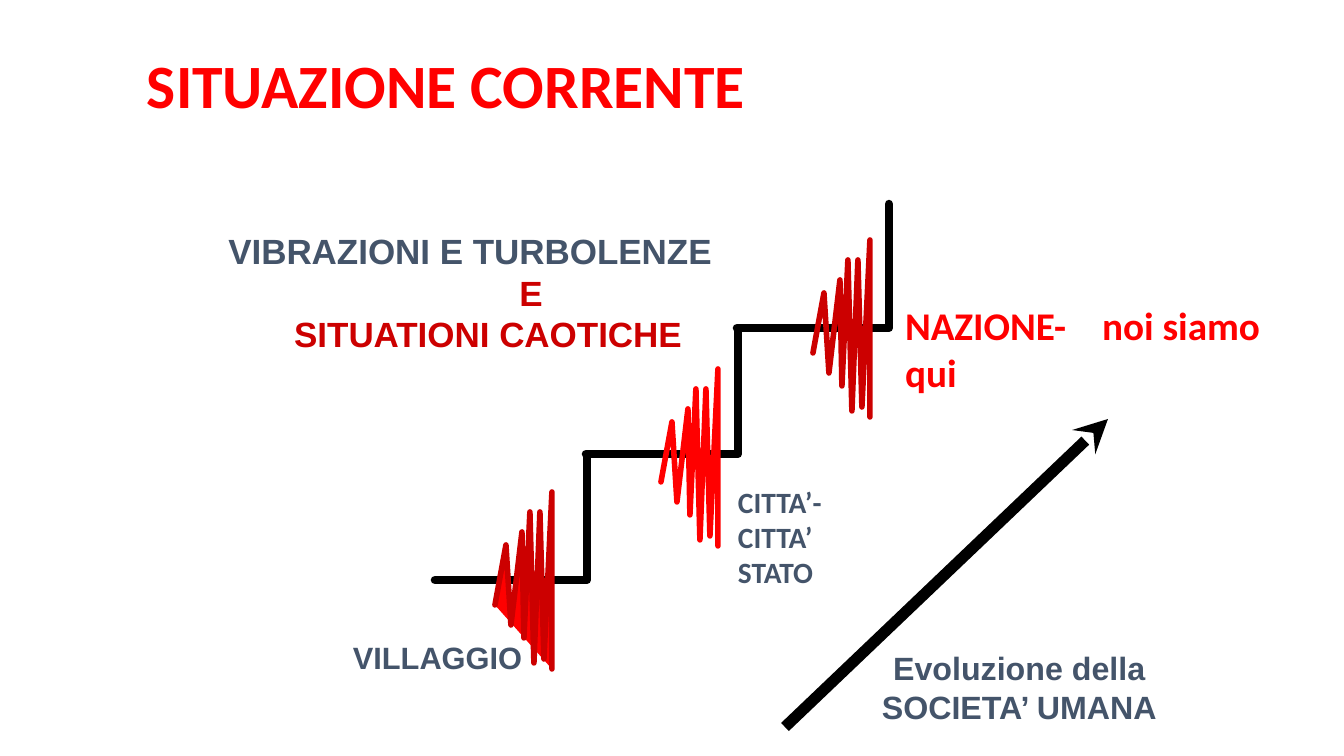
import pptx
import pptx.util
import pptx.dml.color
import pptx.enum.shapes
import pptx.enum.text
import pptx.oxml.ns
from lxml import etree

PX = 914400 / 100.8  # EMU per px
ALIGN = pptx.enum.text.PP_ALIGN
ANCHOR = pptx.enum.text.MSO_ANCHOR
COLORS = {"red": "FF0000", "dark_red": "CC0000", "slate": "44546A", "black": "000000"}

# One step and one turbulence wave, in px from their starting points
STEP = [(0, 0), (152, 0), (152, -124)]
WAVE = [(0, 0), (11, -60), (16, 20), (27, -73), (29, 33), (35, -93),
        (39, 58), (45, -93), (49, 54), (57, -113), (57, 64)]


def px(n):
    return pptx.util.Emu(round(n * PX))


def rgb(name):
    return pptx.dml.color.RGBColor.from_string(COLORS[name])


def sub(parent, tag, **attrs):
    return etree.SubElement(parent, pptx.oxml.ns.qn(tag), attrs)


def add_text(s, box, lines, size, font, color, inset=(10, 5), align=ALIGN.LEFT,
             pitch=None, anchor=ANCHOR.TOP):
    """Place bold lines in the box; return their paragraphs."""
    tf = s.shapes.add_textbox(*map(px, box)).text_frame
    tf.word_wrap = True
    tf.vertical_anchor = anchor
    tf.margin_left = tf.margin_right = px(inset[0])
    tf.margin_top = tf.margin_bottom = px(inset[1])
    for i, line in enumerate(lines):
        p = tf.add_paragraph() if i else tf.paragraphs[0]
        p.text = line
        p.alignment = align
        if pitch:
            p.line_spacing = pitch
        p.font.size = pptx.util.Pt(size)
        p.font.name = font
        p.font.bold = True
        p.font.color.rgb = rgb(color)
    return tf.paragraphs


def add_path(s, x, y, points, color, width, fill=None):
    """Draw an open polyline with round ends, starting at x, y."""
    points = [(x + dx, y + dy) for dx, dy in points]
    builder = s.shapes.build_freeform(*points[0], scale=PX)
    builder.add_line_segments(points[1:], close=False)
    sp = builder.convert_to_shape()
    sp.shadow.inherit = False
    if fill:
        sp.fill.solid()
        sp.fill.fore_color.rgb = rgb(fill)
    else:
        sp.fill.background()
    sp.line.color.rgb = rgb(color)
    sp.line.width = pptx.util.Pt(width)
    ln = sp.line._get_or_add_ln()
    ln.set("cap", "rnd")
    sub(ln, "a:round")


def add_title(s, box):
    add_text(s, box, ["SITUAZIONE CORRENTE"], 44, "Calibri", "red",
             pitch=0.9, anchor=ANCHOR.MIDDLE)


def add_stairs(s, x, y):
    for i in range(3):
        add_path(s, x + 151 * i, y - 126 * i, STEP, "black", 6)
    # Turbulence on each step
    for dx, dy, color, fill in [(226, -98, "red", None), (378, -227, "dark_red", None),
                                (60, 25, "dark_red", "red")]:
        add_path(s, x + dx, y + dy, WAVE, color, 4, fill)


def add_stage_labels(s, x, y):
    add_text(s, (x - 88, y + 56, 250, 43), ["VILLAGGIO"], 22, "Arial", "slate", (6, 3))
    add_text(s, (x + 293, y - 101, 119, 117), ["CITTA’-CITTA’ STATO"], 21, "Calibri", "slate")
    p, = add_text(s, (x + 460, y - 284, 425, 105), ["NAZIONE-\tnoi siamo qui"],
                  28, "Calibri", "red")
    tabs = etree.Element(pptx.oxml.ns.qn("a:tabLst"))
    sub(tabs, "a:tab", pos=str(px(197)), algn="l")
    p._p.get_or_add_pPr().find(pptx.oxml.ns.qn("a:defRPr")).addprevious(tabs)


def add_chaos_heading(s, box):
    lines = ["VIBRAZIONI E TURBOLENZE", "E", "SITUATIONI CAOTICHE"]
    paragraphs = add_text(s, box, lines, 25, "Arial", "dark_red", (6, 3),
                          ALIGN.CENTER, pptx.util.Pt(30))
    paragraphs[0].font.color.rgb = rgb("slate")
    # Indents move the lower lines right of centre
    for p, indent in zip(paragraphs, (0, 122, 36)):
        p._p.get_or_add_pPr().set("marL", str(px(indent)))


def add_evolution(s, box):
    x, y, w, h = box
    arrow = s.shapes.add_connector(pptx.enum.shapes.MSO_CONNECTOR.STRAIGHT,
                                   px(x), px(y + h), px(x + w), px(y))
    arrow.line.color.rgb = rgb("black")
    arrow.line.width = pptx.util.Pt(8)
    sub(arrow.line._get_or_add_ln(), "a:tailEnd", type="stealth")
    sub(arrow._element.spPr, "a:effectLst")
    add_text(s, (x + 65, y + 226, 339, 85), ["Evoluzione della", "SOCIETA’ UMANA"],
             23, "Arial", "slate", (6, 3), ALIGN.CENTER, pptx.util.Pt(28))


def main():
    prs = pptx.Presentation()
    prs.slide_width, prs.slide_height = px(1344), px(756)
    s = prs.slides.add_slide(prs.slide_layouts[6])
    add_title(s, (137, 11, 1052, 156))
    add_stairs(s, 435, 580)
    add_evolution(s, (785, 419, 323, 308))
    add_chaos_heading(s, (204, 226, 532, 134))
    add_stage_labels(s, 435, 580)
    prs.save("out.pptx")


if __name__ == "__main__":
    main()
